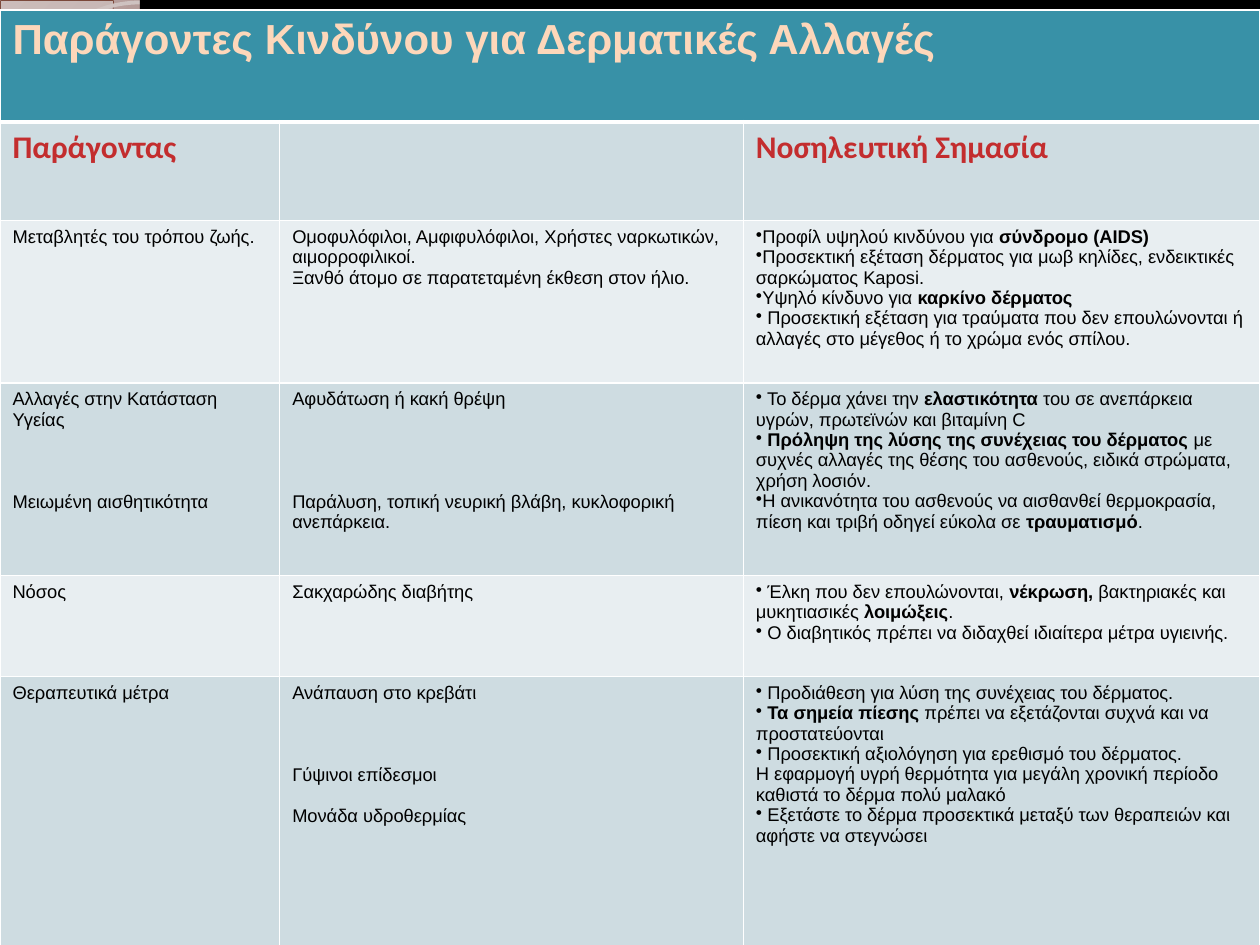
from lxml import etree
from pptx import Presentation
from pptx.dml.color import RGBColor
from pptx.enum.shapes import MSO_SHAPE as Preset
from pptx.oxml import parse_xml
from pptx.oxml.ns import nsdecls, qn
from pptx.util import Inches, Pt

BODY_SIZE = 10.5
LINE_HEIGHT = 11.73
TEAL, MID, PALE = "3891A7", "CEDCE1", "E8EEF1"
COLUMN_WIDTHS = [2.22, 3.68, 4.1]
ROW_HEIGHTS = [0.89, 0.78, 1.29, 1.53, 0.8, 2.14]
ROW_FILLS = [TEAL, MID, PALE, MID, PALE, MID]

# A leading • makes a bullet, * toggles bold, a number skips that many lines.
ROWS = [
    [["*Παράγοντες Κινδύνου για Δερματικές Αλλαγές"], [], []],
    [["*Παράγοντας"], [], ["*Νοσηλευτική Σημασία"]],
    [
        ["Μεταβλητές του τρόπου ζωής."],
        ["Ομοφυλόφιλοι, Αμφιφυλόφιλοι, Χρήστες ναρκωτικών, αιμορροφιλικοί.",
         "Ξανθό άτομο σε παρατεταμένη έκθεση στον ήλιο."],
        ["•Προφίλ υψηλού κινδύνου για *σύνδρομο (AIDS)",
         "•Προσεκτική εξέταση δέρματος για μωβ κηλίδες, ενδεικτικές σαρκώματος Kaposi.",
         "•Υψηλό κίνδυνο για *καρκίνο δέρματος",
         "• Προσεκτική εξέταση για τραύματα που δεν επουλώνονται ή αλλαγές στο "
         "μέγεθος ή το χρώμα ενός σπίλου."],
    ],
    [
        ["Aλλαγές στην Κατάσταση Υγείας", 3, "Μειωμένη αισθητικότητα"],
        ["Αφυδάτωση ή κακή θρέψη", 4,
         "Παράλυση, τοπική νευρική βλάβη, κυκλοφορική ανεπάρκεια."],
        ["• Το δέρμα χάνει την *ελαστικότητα* του σε ανεπάρκεια υγρών, "
         "πρωτεϊνών και βιταμίνη C",
         "• *Πρόληψη της λύσης της συνέχειας του δέρματος *με συχνές αλλαγές της "
         "θέσης του ασθενούς, ειδικά στρώματα, χρήση λοσιόν.",
         "•Η ανικανότητα του ασθενούς να αισθανθεί θερμοκρασία, πίεση και τριβή "
         "οδηγεί εύκολα σε *τραυματισμό*."],
    ],
    [
        ["Νόσος"],
        ["Σακχαρώδης διαβήτης"],
        ["• Έλκη που δεν επουλώνονται, *νέκρωση, *βακτηριακές και μυκητιασικές "
         "*λοιμώξεις*.",
         "• Ο διαβητικός πρέπει να διδαχθεί ιδιαίτερα μέτρα υγιεινής."],
    ],
    [
        ["Θεραπευτικά μέτρα"],
        ["Ανάπαυση στο κρεβάτι", 3, "Γύψινοι επίδεσμοι", 1, "Μονάδα υδροθερμίας"],
        ["• Προδιάθεση για λύση της συνέχειας του δέρματος.",
         "• *Τα σημεία πίεσης *πρέπει να εξετάζονται συχνά και να προστατεύονται",
         "• Προσεκτική αξιολόγηση για ερεθισμό του δέρματος.",
         "Η εφαρμογή υγρή θερμότητα για μεγάλη χρονική περίοδο καθιστά το δέρμα "
         "πολύ μαλακό",
         "• Εξετάστε το δέρμα προσεκτικά μεταξύ των θεραπειών και αφήστε να "
         "στεγνώσει"],
    ],
]


def color(value):
    return RGBColor.from_string(value)


class SlideBuilder:
    row_styles = {0: ("Arial", 24, "FDD7BA"), 1: ("Calibri", 18, "C32D2E")}
    body_style = ("Arial", BODY_SIZE, "000000")

    def __init__(self, presentation):
        self.slide = presentation.slides.add_slide(presentation.slide_layouts[6])

    def background(self, stops):
        self.slide.background.fill.solid()
        solid = next(self.slide.element.iter(qn("a:solidFill")))
        stop_xml = "".join(
            f'<a:gs pos="{position * 1000}"><a:srgbClr val="{value}"/></a:gs>'
            for position, value in stops)
        gradient = parse_xml(
            f'<a:gradFill {nsdecls("a")} rotWithShape="1"><a:gsLst>{stop_xml}</a:gsLst>'
            '<a:path path="circle"><a:fillToRect l="-24000" t="-20000" '
            'r="124000" b="120000"/></a:path></a:gradFill>')
        solid.getparent().replace(solid, gradient)

    def shape(self, preset, box, fill=None, line=None, width=1, alpha=100):
        shape = self.slide.shapes.add_shape(preset, *map(Inches, box))
        shape.shadow.inherit = False
        if fill:
            shape.fill.solid()
            shape.fill.fore_color.rgb = color(fill)
            if alpha < 100:
                fill_color = next(shape.element.spPr.iter(qn("a:srgbClr")))
                etree.SubElement(fill_color, qn("a:alpha"), val=str(alpha * 1000))
        else:
            shape.fill.background()
        if line:
            shape.line.color.rgb = color(line)
            shape.line.width = Pt(width)
        else:
            shape.line.fill.background()
        return shape

    def table(self, rows, left, top):
        frame = self.slide.shapes.add_table(
            len(rows), len(COLUMN_WIDTHS), Inches(left), Inches(top),
            Inches(sum(COLUMN_WIDTHS)), Inches(sum(ROW_HEIGHTS)))
        table = frame.table
        table.first_row = table.horz_banding = False
        for column, width in zip(table.columns, COLUMN_WIDTHS):
            column.width = Inches(width)
        for index, (row, height) in enumerate(zip(table.rows, ROW_HEIGHTS)):
            row.height = Inches(height)
            for cell, content in zip(row.cells, rows[index]):
                cell.fill.solid()
                cell.fill.fore_color.rgb = color(ROW_FILLS[index])
                self.borders(cell, 3 if index == 1 else 1, 3 if index == 0 else 1)
                self.cell_text(cell, content, self.row_styles.get(index, self.body_style))
        table.cell(0, 0).merge(table.cell(0, len(COLUMN_WIDTHS) - 1))

    def borders(self, cell, top, bottom):
        properties = cell._tc.get_or_add_tcPr()
        widths = {"lnL": 1, "lnR": 1, "lnT": top, "lnB": bottom}
        for position, (tag, width) in enumerate(widths.items()):
            properties.insert(position, parse_xml(
                f'<a:{tag} {nsdecls("a")} w="{Pt(width)}"><a:solidFill>'
                f'<a:srgbClr val="FFFFFF"/></a:solidFill></a:{tag}>'))

    def cell_text(self, cell, content, style):
        paragraph, skipped = cell.text_frame.paragraphs[0], 0
        for item in content:
            if isinstance(item, int):
                skipped = item
                continue
            if paragraph.runs:
                paragraph = cell.text_frame.add_paragraph()
            if skipped:
                paragraph.space_before = Pt(round(skipped * LINE_HEIGHT, 1))
                skipped = 0
            if item.startswith("•"):
                properties = paragraph._p.get_or_add_pPr()
                properties.set("marL", "0")
                properties.set("indent", "0")
                etree.SubElement(properties, qn("a:buChar"), char="•")
            self.runs(paragraph, item.removeprefix("•"), style)

    def runs(self, paragraph, text, style):
        name, size, value = style
        for index, part in enumerate(text.split("*")):
            if part:
                run = paragraph.add_run()
                run.text = part
                run.font.name = name
                run.font.size = Pt(size)
                run.font.bold = index % 2 == 1
                run.font.color.rgb = color(value)


def main():
    presentation = Presentation()
    presentation.slide_width = Inches(10)
    presentation.slide_height = Inches(7.5)
    builder = SlideBuilder(presentation)
    builder.background([(0, "BBA6A3"), (40, "916761"), (100, "531200")])
    pie = builder.shape(Preset.PIE, (-0.89, -0.89, 1.79, 1.79), "ECEAE9", "591502", 0.25, 33)
    pie.adjustments[0], pie.adjustments[1] = 0, 54.02
    builder.shape(Preset.OVAL, (0.18, 0.02, 1.86, 1.86), line="CEC2C0", width=2.15)
    builder.shape(Preset.RECTANGLE, (1.11, 0, 8.89, 7.5), "000000")
    builder.table(ROWS, 0, 0.08)
    presentation.save("out.pptx")


if __name__ == "__main__":
    main()
